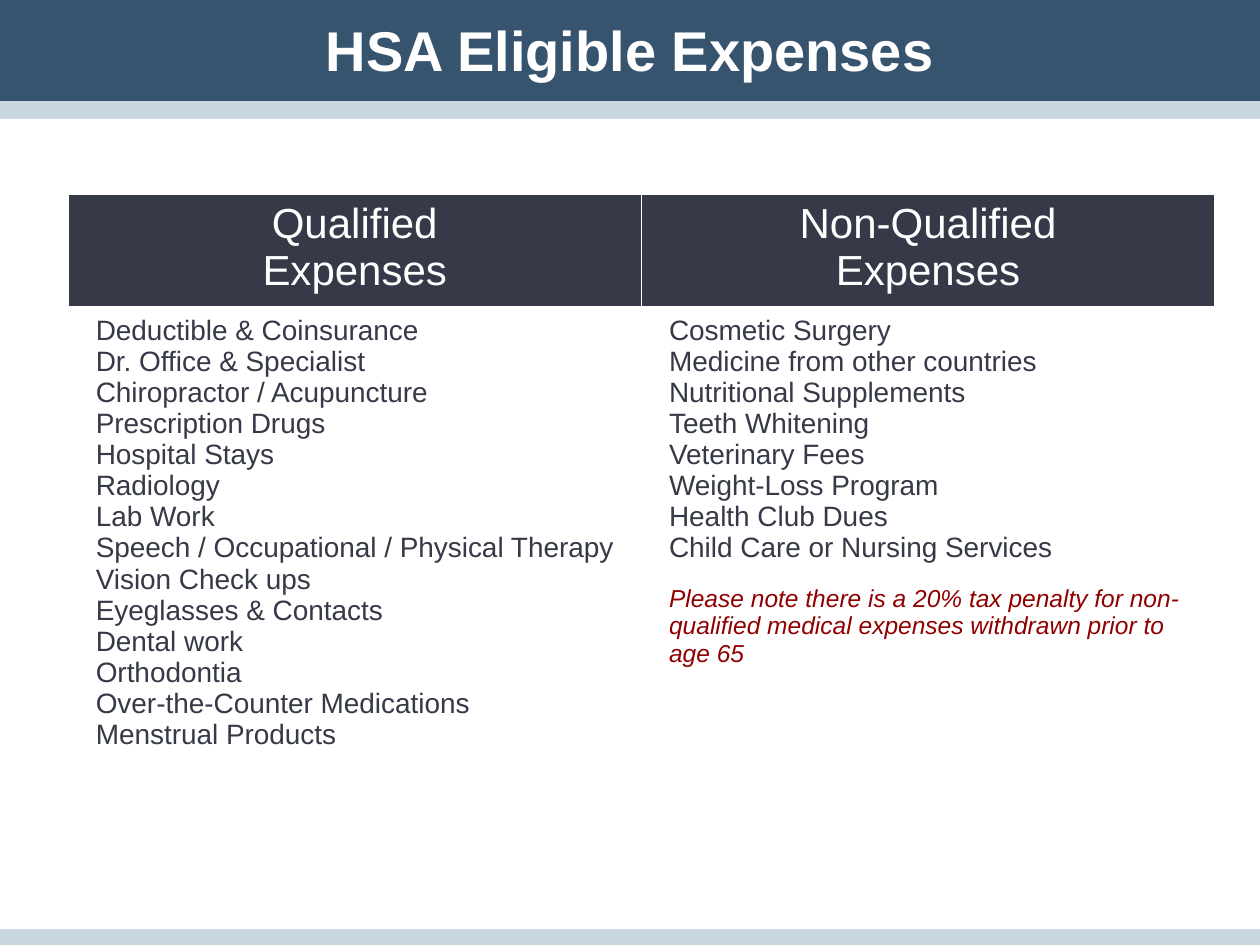
from lxml.etree import SubElement
from pptx import Presentation
from pptx.dml.color import RGBColor
from pptx.enum.shapes import MSO_SHAPE as Shape
from pptx.enum.text import MSO_ANCHOR as Anchor, PP_ALIGN as Align
from pptx.oxml.ns import qn
from pptx.util import Inches, Pt

COLORS = {
    "title": "37546F",
    "accent": "C9D8E0",
    "ink": "363947",
    "note": "900000",
    "white": "FFFFFF",
}
FONT = "Arial"

EXPENSES = {
    "Qualified": [
        "Deductible & Coinsurance", "Dr. Office & Specialist",
        "Chiropractor / Acupuncture", "Prescription Drugs", "Hospital Stays",
        "Radiology", "Lab Work", "Speech / Occupational / Physical Therapy",
        "Vision Check ups", "Eyeglasses & Contacts", "Dental work",
        "Orthodontia", "Over-the-Counter Medications", "Menstrual Products",
    ],
    "Non-Qualified": [
        "Cosmetic Surgery", "Medicine from other countries",
        "Nutritional Supplements", "Teeth Whitening", "Veterinary Fees",
        "Weight-Loss Program", "Health Club Dues",
        "Child Care or Nursing Services",
    ],
}
PENALTY_NOTE = ("Please note there is a 20% tax penalty for non-qualified "
                "medical expenses withdrawn prior to age 65")


def color(name):
    return RGBColor.from_string(COLORS[name])


def paint(shape, name):
    shape.fill.solid()
    shape.fill.fore_color.rgb = color(name)
    shape.line.color.rgb = color(name)
    shape.line.width = Pt(1)


def style(paragraph, size, color_name, bold=False, italic=False):
    font = paragraph.font
    font.name, font.size = FONT, Pt(size)
    font.bold, font.italic = bold, italic
    font.color.rgb = color(color_name)


def add_bar(slide, left, top, width, height):
    bar = slide.shapes.add_shape(Shape.RECTANGLE, left, top, width, height)
    bar.shadow.inherit = False
    paint(bar, "accent")


def place_title(slide, text, left, top, width, height):
    title = slide.shapes.title
    title.left, title.top, title.width, title.height = left, top, width, height
    paint(title, "title")
    frame = title.text_frame
    frame.text = text
    frame.vertical_anchor = Anchor.MIDDLE
    frame.paragraphs[0].alignment = Align.CENTER
    style(frame.paragraphs[0], 32, "white", bold=True)


def format_cell(cell, fill, bottom_width=1):
    # Borders come before the fill in the cell properties
    properties = cell._tc.get_or_add_tcPr()
    for side in "LRTB":
        width = bottom_width if side == "B" else 1
        line = SubElement(properties, qn(f"a:ln{side}"), w=str(Pt(width)))
        solid = SubElement(line, qn("a:solidFill"))
        SubElement(solid, qn("a:srgbClr"), val=COLORS["white"])
    cell.fill.solid()
    cell.fill.fore_color.rgb = color(fill)


def fill_header(cell, heading):
    format_cell(cell, "ink", bottom_width=3)
    cell.text = f"{heading}\nExpenses"
    for paragraph in cell.text_frame.paragraphs:
        paragraph.alignment = Align.CENTER
        style(paragraph, 24, "white")


def fill_list(cell, items):
    format_cell(cell, "white")
    cell.text = "\n".join(items)
    for paragraph in cell.text_frame.paragraphs:
        indent(paragraph)
        style(paragraph, 16, "ink")


def indent(paragraph):
    paragraph._p.get_or_add_pPr().set("marL", str(Inches(0.12)))


def add_note(cell, text):
    paragraph = cell.text_frame.add_paragraph()
    paragraph.text = text
    paragraph.space_before = Pt(12)
    indent(paragraph)
    style(paragraph, 14, "note", italic=True)


def add_expense_table(slide, left, top, width, height):
    columns = len(EXPENSES)
    table = slide.shapes.add_table(2, columns, left, top, width, height).table
    header_height = Inches(0.91)
    table.rows[0].height = header_height
    table.rows[1].height = height - header_height
    for index, (heading, items) in enumerate(EXPENSES.items()):
        fill_header(table.cell(0, index), heading)
        fill_list(table.cell(1, index), items)
    add_note(table.cell(1, columns - 1), PENALTY_NOTE)


def main():
    presentation = Presentation()
    presentation.slide_width, presentation.slide_height = Inches(10), Inches(7.5)
    slide = presentation.slides.add_slide(presentation.slide_layouts[5])

    # Title band with accent bars below it and at the foot
    place_title(slide, "HSA Eligible Expenses",
                Inches(0), Inches(-0.02), Inches(10), Inches(0.82))
    for top in (0.81, 7.38):
        add_bar(slide, Inches(0), Inches(top), Inches(10), Inches(0.13))

    # Expense lists
    add_expense_table(slide, Inches(0.54), Inches(1.54), Inches(9.1), Inches(4.93))
    presentation.save("out.pptx")


if __name__ == "__main__":
    main()
